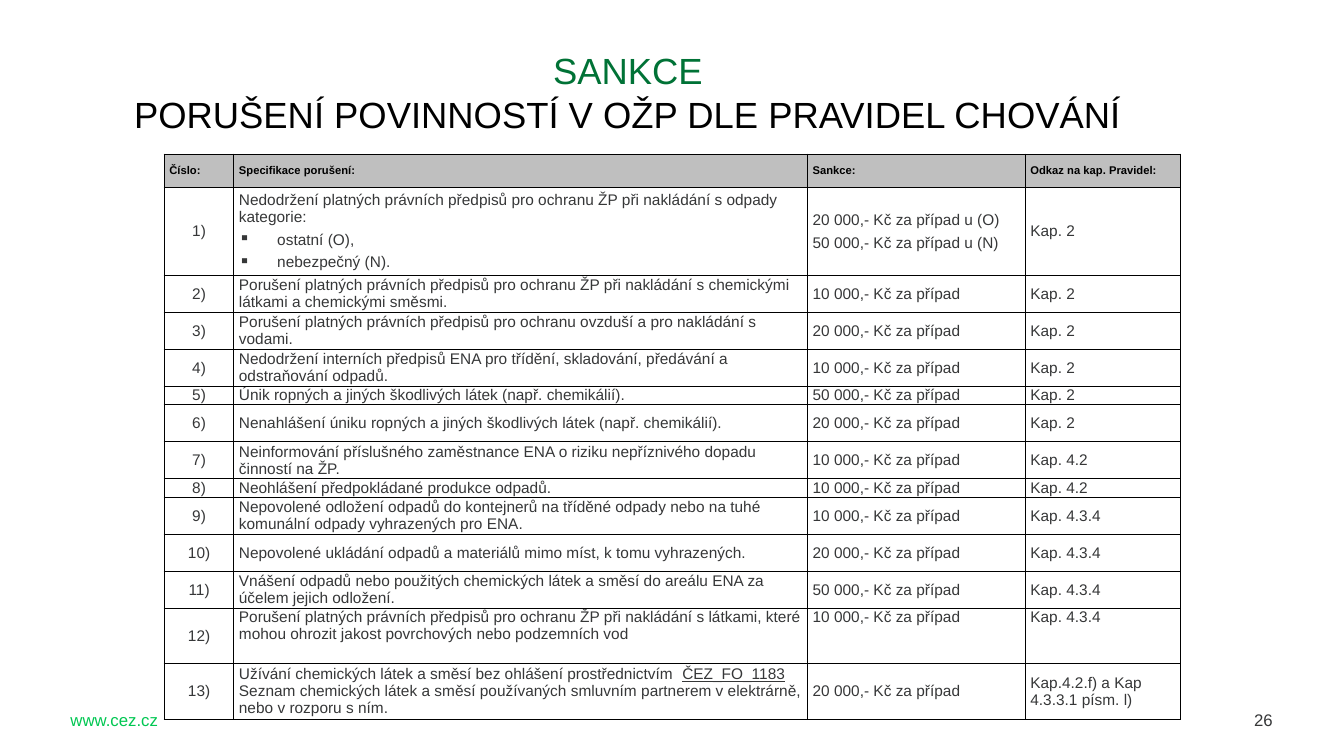
from lxml.etree import SubElement
from pptx import Presentation
from pptx.dml.color import RGBColor
from pptx.enum.text import MSO_ANCHOR as Anchor, PP_ALIGN as Align
from pptx.oxml.ns import qn
from pptx.util import Inches, Pt

COLORS = {"ink": "363738", "black": "000000", "title": "007236",
          "link": "00C752", "header": "BFBFBF"}
COLUMNS = [0.69, 5.69, 2.16, 1.54]
HEADER_HEIGHT, FIRST_HEIGHT, LINE_HEIGHT = Inches(0.33), Inches(0.87), Pt(13.2)
BULLET = "▪ "
FORM = "ČEZ_FO_1183"

HEADINGS = ["Číslo:", "Specifikace porušení:", "Sankce:", "Odkaz na kap. Pravidel:"]
# lines of height, specification, sanction, chapter
BREACHES = [
    (None, ["Nedodržení platných právních předpisů pro ochranu ŽP při nakládání s odpady kategorie:",
            BULLET + "ostatní (O),", BULLET + "nebezpečný (N)."],
     ["20 000,- Kč za případ u (O)", "50 000,- Kč za případ u (N)"], "Kap. 2"),
    (2, ["Porušení platných právních předpisů pro ochranu ŽP při nakládání s chemickými látkami a chemickými směsmi."],
     ["10 000,- Kč za případ"], "Kap. 2"),
    (2, ["Porušení platných právních předpisů pro ochranu ovzduší a pro nakládání s vodami."],
     ["20 000,- Kč za případ"], "Kap. 2"),
    (2, ["Nedodržení interních předpisů ENA pro třídění, skladování, předávání a odstraňování odpadů."],
     ["10 000,- Kč za případ"], "Kap. 2"),
    (1, ["Únik ropných a jiných škodlivých látek (např. chemikálií)."],
     ["50 000,- Kč za případ"], "Kap. 2"),
    (2, ["Nenahlášení úniku ropných a jiných škodlivých látek (např. chemikálií)."],
     ["20 000,- Kč za případ"], "Kap. 2"),
    (2, ["Neinformování příslušného zaměstnance ENA o riziku nepříznivého dopadu činností na ŽP."],
     ["10 000,- Kč za případ"], "Kap. 4.2"),
    (1, ["Neohlášení předpokládané produkce odpadů."],
     ["10 000,- Kč za případ"], "Kap. 4.2"),
    (2, ["Nepovolené odložení odpadů do kontejnerů na tříděné odpady nebo na tuhé komunální odpady vyhrazených pro ENA."],
     ["10 000,- Kč za případ"], "Kap. 4.3.4"),
    (2, ["Nepovolené ukládání odpadů a materiálů mimo míst, k tomu vyhrazených."],
     ["20 000,- Kč za případ"], "Kap. 4.3.4"),
    (2, ["Vnášení odpadů nebo použitých chemických látek a směsí do areálu ENA za účelem jejich odložení."],
     ["50 000,- Kč za případ"], "Kap. 4.3.4"),
    (3, ["Porušení platných právních předpisů pro ochranu ŽP při nakládání s látkami, které mohou ohrozit jakost povrchových nebo podzemních vod"],
     ["10 000,- Kč za případ"], "Kap. 4.3.4"),
    (3, ["Užívání chemických látek a směsí bez ohlášení prostřednictvím  " + FORM
         + " Seznam chemických látek a směsí používaných smluvním partnerem v elektrárně, nebo v rozporu s ním."],
     ["20 000,- Kč za případ"], "Kap.4.2.f) a Kap 4.3.3.1 písm. l)"),
]
TOP_ALIGNED_BREACH = 12


def add_run(paragraph, text, color, **font_format):
    run = paragraph.add_run()
    run.text = text
    run.font.color.rgb = RGBColor.from_string(COLORS[color])
    for key, value in ({"name": "Arial", "bold": False} | font_format).items():
        setattr(run.font, key, value)


def add_label(slide, box, lines, size, **paragraph_format):
    """Text box whose (text, colour) lines are parted by line breaks."""
    frame = slide.shapes.add_textbox(*map(Inches, box)).text_frame
    frame.word_wrap = True
    frame.vertical_anchor = Anchor.MIDDLE
    paragraph = frame.paragraphs[0]
    for key, value in paragraph_format.items():
        setattr(paragraph, key, value)
    for number, (text, color) in enumerate(lines):
        if number:
            paragraph.add_line_break()
        add_run(paragraph, text, color, size=Pt(size))


def add_bullet(paragraph):
    properties = paragraph._p.get_or_add_pPr()
    properties.set("marL", str(Inches(0.38)))
    properties.set("indent", str(-Inches(0.38)))
    SubElement(properties, qn("a:buChar")).set("char", BULLET.strip())


def set_borders(cell):
    properties = cell._tc.get_or_add_tcPr()
    for position, side in enumerate(("lnL", "lnR", "lnT", "lnB")):
        line = properties.makeelement(qn(f"a:{side}"), {"w": str(Pt(1))})
        fill = SubElement(line, qn("a:solidFill"))
        SubElement(fill, qn("a:srgbClr")).set("val", COLORS["black"])
        properties.insert(position, line)


def fill_cell(cell, texts, color="ink", align=Align.LEFT, anchor=Anchor.MIDDLE, **font_format):
    cell_format = {"margin_left": Inches(0.05), "margin_right": Inches(0.05),
                   "margin_top": 0, "margin_bottom": 0, "vertical_anchor": anchor}
    for key, value in cell_format.items():
        setattr(cell, key, value)
    cell.fill.background()
    set_borders(cell)
    frame = cell.text_frame
    for number, text in enumerate(texts):
        paragraph = frame.add_paragraph() if number else frame.paragraphs[0]
        if text.startswith(BULLET):
            add_bullet(paragraph)
        paragraph.alignment = align
        if number:
            paragraph.space_before = Pt(4)
        before, form, after = text.removeprefix(BULLET).partition(FORM)
        for part in filter(None, (before, form, after)):
            add_run(paragraph, part, color, underline=part == FORM,
                    **({"size": Pt(11)} | font_format))


def add_sanctions(slide):
    table = slide.shapes.add_table(len(BREACHES) + 1, len(COLUMNS), Inches(1.63), Inches(1.53),
                                   Inches(sum(COLUMNS)), Inches(5.59)).table
    table.horz_banding = False
    for column, width in zip(table.columns, COLUMNS):
        column.width = Inches(width)
    table.rows[0].height = HEADER_HEIGHT
    for cell, heading in zip(table.rows[0].cells, HEADINGS):
        fill_cell(cell, [heading], "black", size=Pt(8), bold=True)
        cell.fill.solid()
        cell.fill.fore_color.rgb = RGBColor.from_string(COLORS["header"])
    for number, (lines, breach, sanction, chapter) in enumerate(BREACHES, 1):
        row = table.rows[number]
        row.height = lines * LINE_HEIGHT if lines else FIRST_HEIGHT
        number_cell, *detail_cells = row.cells
        fill_cell(number_cell, [f"{number})"], align=Align.CENTER)
        anchor = Anchor.TOP if number == TOP_ALIGNED_BREACH else Anchor.MIDDLE
        for cell, texts in zip(detail_cells, (breach, sanction, [chapter])):
            fill_cell(cell, texts, anchor=anchor)


def main():
    deck = Presentation()
    deck.slide_width, deck.slide_height = Inches(13.33), Inches(7.5)
    slide = deck.slides.add_slide(deck.slide_layouts[6])
    add_label(slide, (12.34, 6.99, 0.47, 0.3), [("26", "ink")], 12)
    add_label(slide, (0.6, 6.99, 1.81, 0.3), [("www.cez.cz", "link")], 12)
    add_label(slide, (0.6, 0.39, 11.26, 1.04),
              [("SANKCE", "title"), ("PORUŠENÍ POVINNOSTÍ V OŽP DLE PRAVIDEL CHOVÁNÍ", "black")],
              26, alignment=Align.CENTER)
    add_sanctions(slide)
    deck.save("out.pptx")


if __name__ == "__main__":
    main()
